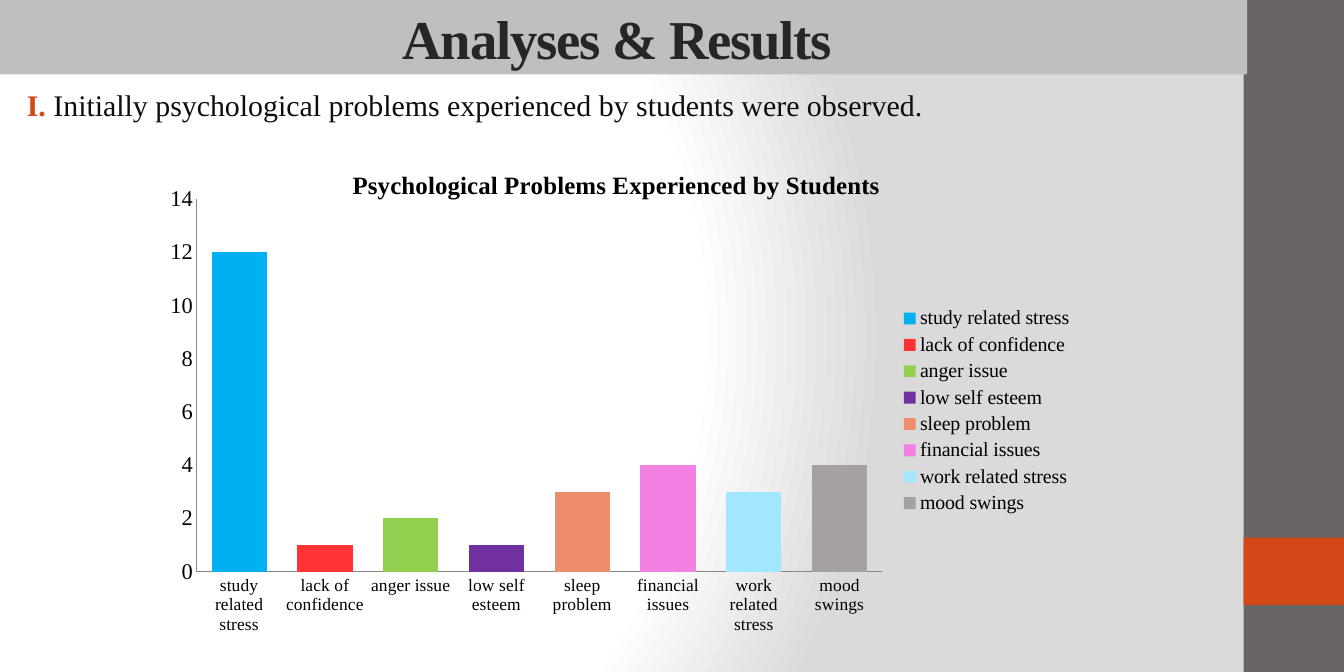
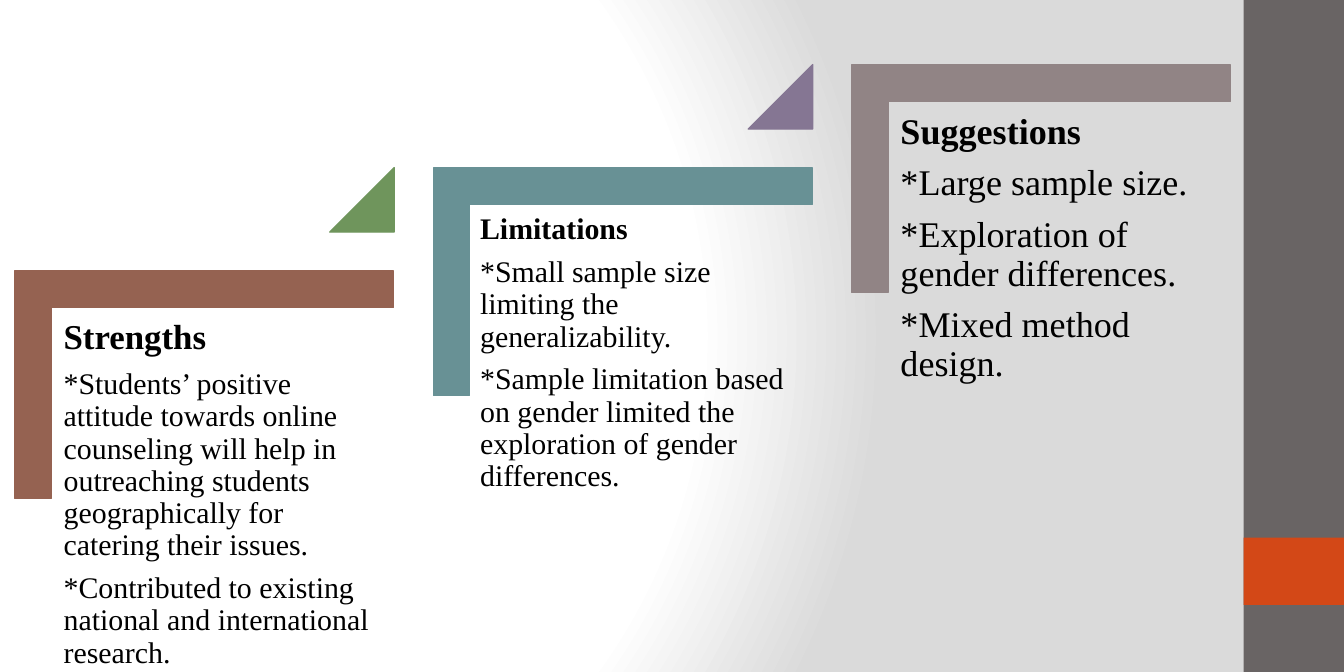
import pptx
import pptx.chart.data
import pptx.dml.color
import pptx.enum.chart
import pptx.enum.shapes
import pptx.enum.text
import pptx.oxml
import pptx.oxml.ns
import pptx.util
from pptx.util import Inches

FONT = "Times New Roman"
GRAY, ACCENT, BAND = "696464", "D34817", "BFBFBF"
BLACK = "000000"
SHAPE = pptx.enum.shapes.MSO_SHAPE
qn = pptx.oxml.ns.qn

GRAD = (
    '<a:gradFill xmlns:a="http://schemas.openxmlformats.org/drawingml/2006/main" rotWithShape="1">'
    '<a:gsLst><a:gs pos="0"><a:srgbClr val="FFFFFF"/></a:gs>'
    '<a:gs pos="75000"><a:srgbClr val="FFFFFF"/></a:gs>'
    '<a:gs pos="100000"><a:srgbClr val="DADADA"/></a:gs></a:gsLst>'
    '<a:path path="circle"><a:fillToRect l="20000" t="50000" r="100000" b="50000"/></a:path>'
    '</a:gradFill>')

PROBLEMS = [
    ("study related stress", 12, "00B0F0"),
    ("lack of confidence", 1, "FF3333"),
    ("anger issue", 2, "92D050"),
    ("low self esteem", 1, "7030A0"),
    ("sleep problem", 3, "EF8C6A"),
    ("financial issues", 4, "F381E3"),
    ("work related stress", 3, "A3E7FF"),
    ("mood swings", 4, "A6A1A1"),
]

# heading, heading size, body size, inset, corner colour, triangle colour, points
STEPS = [
    ("Strengths", 28, 24, 0.12, "956251", "6F955C", [
        "*Students’ positive attitude towards online counseling will help in "
        "outreaching students geographically for catering their issues.",
        "*Contributed to existing national and international research."]),
    ("Limitations", 24, 24, 0.1, "689195", "857693", [
        "*Small sample size limiting the generalizability.",
        "*Sample limitation based on gender limited the exploration of gender differences."]),
    ("Suggestions", 29, 29, 0.12, "918485", None, [
        "*Large sample size.",
        "*Exploration of gender differences.",
        "*Mixed method design."]),
]
STEP_X, STEP_Y = 4.67, -1.15


def color(code):
    return pptx.dml.color.RGBColor.from_string(code)


def style(font, size, code=BLACK, bold=False):
    font.name = FONT
    font.size = pptx.util.Pt(size)
    font.color.rgb = color(code)
    font.bold = bold


def add_run(para, text, size, code=BLACK, bold=False):
    run = para.add_run()
    run.text = text
    style(run.font, size, code, bold)
    return run


def add_block(slide, kind, box, fill, line=False):
    shape = slide.shapes.add_shape(kind, *map(Inches, box))
    shape.shadow.inherit = False
    shape.fill.solid()
    shape.fill.fore_color.rgb = color(fill)
    if line:
        shape.line.color.rgb = color(fill)
        shape.line.width = pptx.util.Pt(1)
    else:
        shape.line.fill.background()
    return shape


def add_text(slide, box):
    frame = slide.shapes.add_textbox(*map(Inches, box)).text_frame
    frame.word_wrap = True
    return frame


def add_page(deck):
    """Add a slide with the shared background and side bands."""
    slide = deck.slides.add_slide(deck.slide_layouts[6])
    slide.background.fill.gradient()
    old = next(slide.element.iter(qn("a:gradFill")))
    old.getparent().replace(old, pptx.oxml.parse_xml(GRAD))
    add_block(slide, SHAPE.RECTANGLE, (13.88, 0, 1.12, 7.5), GRAY)
    add_block(slide, SHAPE.RECTANGLE, (13.88, 6, 1.12, 0.75), ACCENT)
    return slide


def add_title(slide, text):
    frame = add_block(slide, SHAPE.RECTANGLE, (0, 0, 13.92, 0.83), BAND).text_frame
    frame.vertical_anchor = pptx.enum.text.MSO_ANCHOR.MIDDLE
    para = frame.paragraphs[0]
    para.alignment = pptx.enum.text.PP_ALIGN.CENTER
    run = add_run(para, text, 44, "262626", True)
    run.font._element.set("spc", "-100")


def add_lead(slide, mark, text):
    frame = add_text(slide, (0.08, 0.92, 13.67, 0.6))
    frame.margin_left = Inches(0.22)
    para = frame.paragraphs[0]
    para.space_before = pptx.util.Pt(4.8)
    add_run(para, mark, 24, ACCENT, True)
    add_run(para, text, 24, "0D0D0D")


def place_plot(chart, x, y, w, h):
    """Set the inner plot area as fractions of the chart."""
    area = next(chart._chartSpace.iter(qn("c:plotArea")))
    for old in area.findall(qn("c:layout")):
        area.remove(old)
    sizes = "".join(f'<c:{tag} val="{val}"/>' for tag, val in zip("xywh", (x, y, w, h)))
    area.insert(0, pptx.oxml.parse_xml(
        '<c:layout xmlns:c="http://schemas.openxmlformats.org/drawingml/2006/chart">'
        '<c:manualLayout><c:layoutTarget val="inner"/><c:xMode val="edge"/>'
        f'<c:yMode val="edge"/>{sizes}</c:manualLayout></c:layout>'))


def add_chart(slide, box, title, rows):
    enum = pptx.enum.chart
    data = pptx.chart.data.CategoryChartData()
    data.categories = [name for name, _, _ in rows]
    data.add_series("Series 1", [val for _, val, _ in rows])
    chart = slide.shapes.add_chart(
        enum.XL_CHART_TYPE.COLUMN_STACKED, *map(Inches, box), data).chart
    style(chart.font, 18)
    chart.has_title = True
    add_run(chart.chart_title.text_frame.paragraphs[0], title, 20, bold=True)
    chart.has_legend = True
    chart.legend.position = enum.XL_LEGEND_POSITION.RIGHT
    chart.legend.include_in_layout = False
    style(chart.legend.font, 16)

    for axis, size in ((chart.category_axis, 14), (chart.value_axis, 18)):
        axis.has_major_gridlines = False
        axis.major_tick_mark = axis.minor_tick_mark = enum.XL_TICK_MARK.NONE
        axis.format.line.color.rgb = color("868686")
        style(axis.tick_labels.font, size)
    chart.value_axis.minimum_scale = 0
    chart.value_axis.maximum_scale = 14
    chart.value_axis.major_unit = 2

    plot = chart.plots[0]
    plot.gap_width = 55
    plot.overlap = 100
    plot.vary_by_categories = True
    for i, (_, _, code) in enumerate(rows):
        fill = plot.series[0].points[i].format.fill
        fill.solid()
        fill.fore_color.rgb = color(code)
    place_plot(chart, 0.05, 0.095, 0.735, 0.713)


def add_step(slide, i, head, big, small, inset, edge, tip, points):
    """Draw one stair: corner, text and the triangle leading to the next."""
    x, y = i * STEP_X, i * STEP_Y
    corner = add_block(slide, SHAPE.CORNER, (1.01 + x, 2.18 + y, 2.54, 4.23), edge, True)
    corner.rotation = 90
    corner.adjustments[0] = corner.adjustments[1] = 0.16

    frame = add_text(slide, (0.59 + x, 3.44 + y, 3.82, 3.35))
    frame.margin_left = frame.margin_right = Inches(inset)
    frame.margin_top = frame.margin_bottom = Inches(inset)
    for n, text in enumerate([head] + points):
        para = frame.add_paragraph() if n else frame.paragraphs[0]
        size = small if n else big
        para.line_spacing = 0.9
        para.space_after = pptx.util.Pt(round(0.35 * size, 1))
        add_run(para, text, size, bold=n == 0)

    if tip:
        mark = add_block(slide, SHAPE.ISOSCELES_TRIANGLE,
                         (3.68 + x, 1.87 + y, 0.72, 0.72), tip, True)
        mark.adjustments[0] = 1


def main():
    deck = pptx.Presentation()
    deck.slide_width, deck.slide_height = Inches(15), Inches(7.5)

    slide = add_page(deck)
    add_title(slide, "Analyses & Results ")
    add_lead(slide, "I. ",
             "Initially psychological problems experienced by students were observed.")
    add_chart(slide, (1.67, 1.67, 10.42, 5.83),
              "Psychological Problems Experienced by Students", PROBLEMS)

    slide = add_page(deck)
    for i, step in enumerate(STEPS):
        add_step(slide, i, *step)

    deck.save("out.pptx")


if __name__ == "__main__":
    main()
